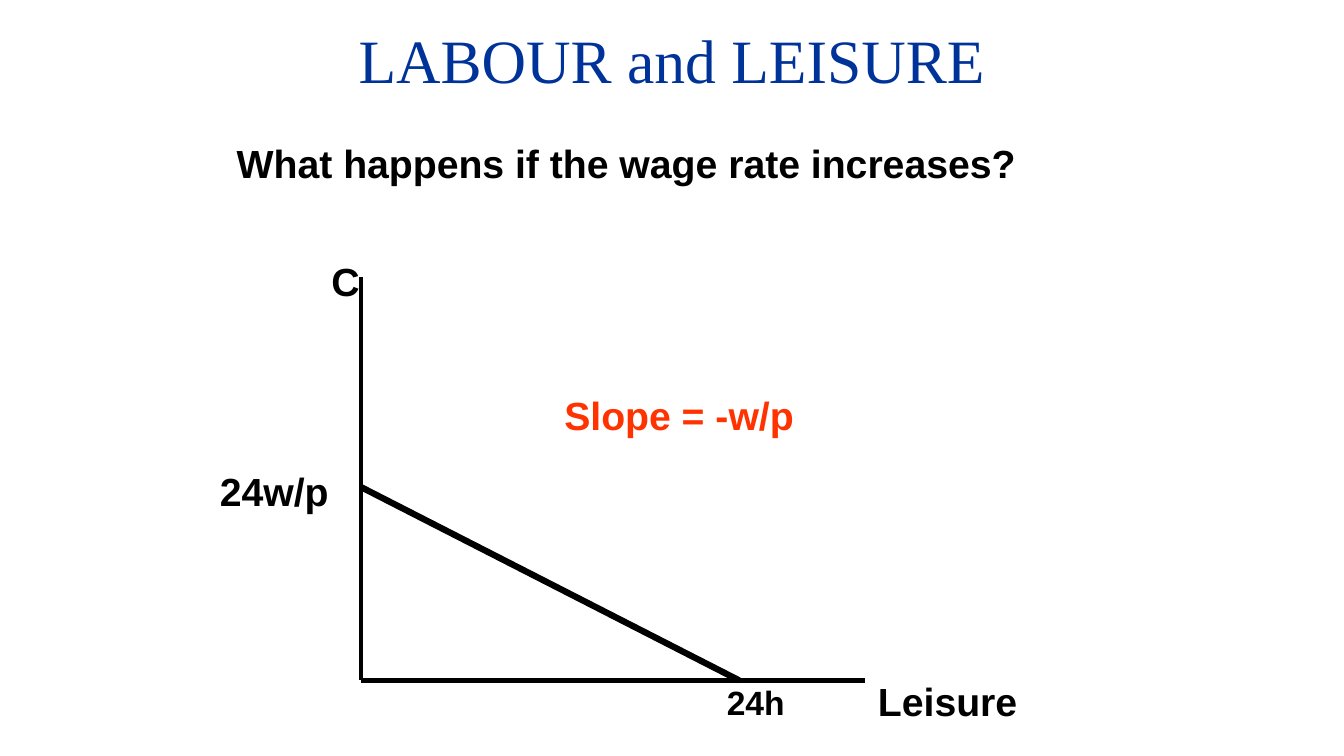
from lxml import etree
from pptx import Presentation, util as u
from pptx.dml.color import RGBColor
from pptx.enum import shapes, text
from pptx.oxml.ns import qn

COLORS = {"title": "003399", "ink": "000000", "accent": "FF3300"}
COLS, ROWS = 160, 90
SLIDE_W, SLIDE_H = u.Inches(13.33), u.Inches(7.5)
LABEL_H = 6.8
INDENT = 0.21


def grid(col, row):
    """Turn grid columns and rows into slide lengths."""
    return int(SLIDE_W * col / COLS), int(SLIDE_H * row / ROWS)


def add_text(s, box, words, size=28, font="Arial", color="ink", bold=True,
             align=text.PP_ALIGN.LEFT, anchor=text.MSO_ANCHOR.TOP, left=0.1, top=0.05):
    """Add a one-line text box at a left, top, width, height in grid units."""
    x, y, w, h = box
    sp = s.shapes.add_textbox(*grid(x, y), *grid(w, h))
    tf = sp.text_frame
    tf.word_wrap = True
    tf.vertical_anchor = anchor
    tf.margin_left, tf.margin_top = u.Inches(left), u.Inches(top)
    p = tf.paragraphs[0]
    p.alignment = align
    r = p.add_run()
    r.text = words
    r.font.name, r.font.size, r.font.bold = font, u.Pt(size), bold
    r.font.color.rgb = RGBColor.from_string(COLORS[color])


def add_line(s, start, end, width=3):
    """Add a straight line between two grid points."""
    line = s.shapes.add_connector(shapes.MSO_CONNECTOR.STRAIGHT, *grid(*start), *grid(*end))
    line.line.color.rgb = RGBColor.from_string(COLORS["ink"])
    line.line.width = u.Pt(width)
    etree.SubElement(line._element.spPr, qn("a:effectLst"))


def add_heading(s, x, y, w):
    """Place the title and the question below it."""
    add_text(s, (x, y, w, 8), "LABOUR and LEISURE", size=44, font="Times New Roman",
             color="title", bold=False, align=text.PP_ALIGN.CENTER,
             anchor=text.MSO_ANCHOR.MIDDLE)
    add_text(s, (x - 2, y + 13, w + 1, LABEL_H), "What happens if the wage rate increases?")


def add_budget_graph(s, x, y, w, h):
    """Draw the axes, the budget line and their labels in the given box."""
    right, base = x + w, y + h
    wage_row, hours_col = y + 25, x + 45
    add_line(s, (x, y), (x, base))
    add_line(s, (x, base), (right, base))
    add_text(s, (x - 11, y - 3, 12, LABEL_H), "C", align=text.PP_ALIGN.RIGHT)
    add_text(s, (right - 1, base - 1, 23, LABEL_H), "Leisure", left=INDENT)
    add_line(s, (x, wage_row), (hours_col, base), width=4.5)
    add_text(s, (hours_col - 4, base - 1, 14, LABEL_H), "24h", size=24, left=INDENT, top=0.1)
    add_text(s, (x - 18, wage_row - 3, 16, LABEL_H), "24w/p")
    add_text(s, (x + 23, y + 13, 47, LABEL_H), "Slope = -w/p", color="accent")


def main():
    """Build and save the slide."""
    prs = Presentation()
    prs.slide_width, prs.slide_height = SLIDE_W, SLIDE_H
    s = prs.slides.add_slide(prs.slide_layouts[6])
    add_heading(s, 29, 3, 102)
    add_budget_graph(s, 43, 33, 60, 48)
    prs.save("out.pptx")


if __name__ == "__main__":
    main()
